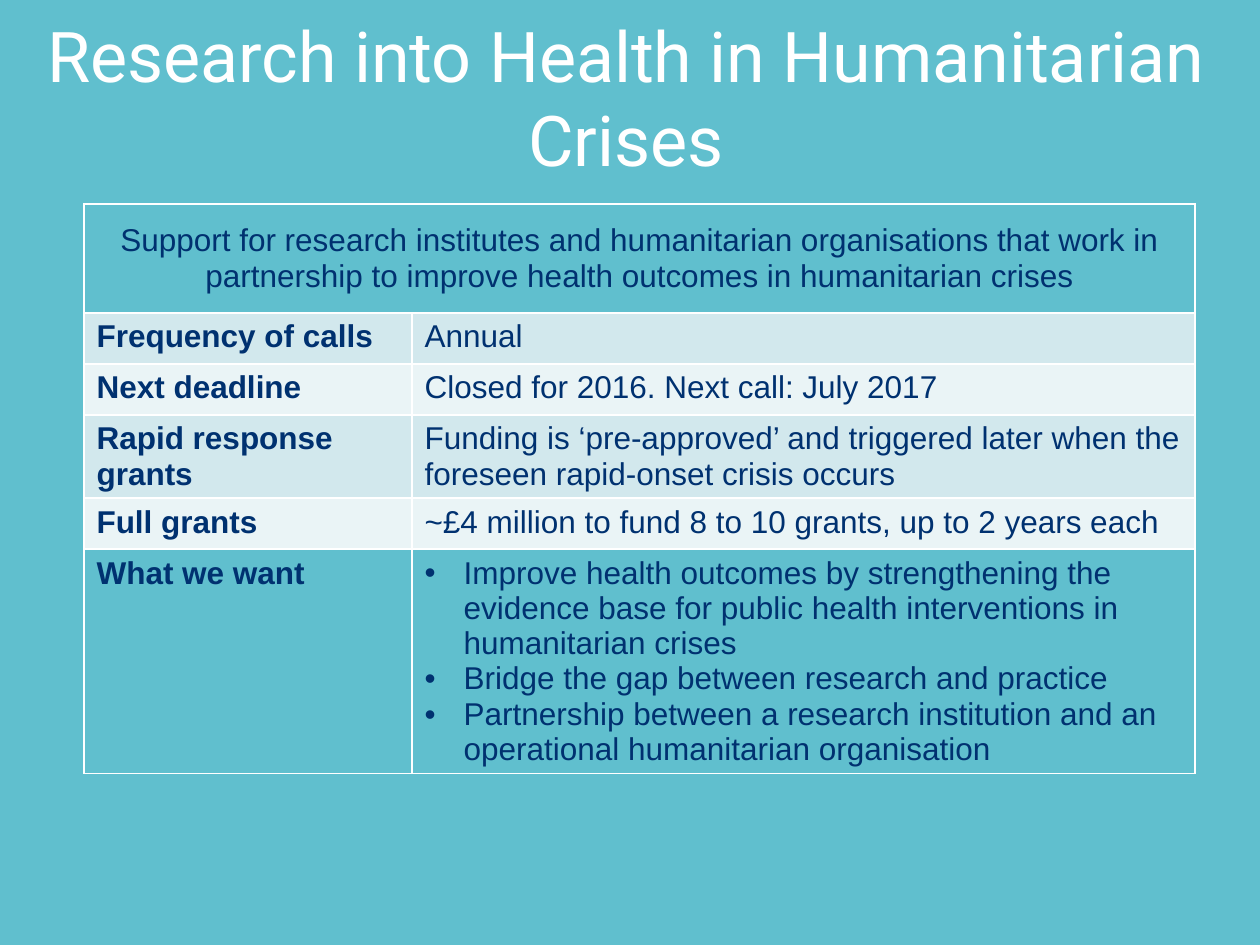
import dataclasses

import lxml.etree
import pptx
import pptx.dml.color
import pptx.enum.text
import pptx.oxml.ns
import pptx.util

EMU_PER_PX = 914400 / 126
COLORS = {
    "background": "60BFCE",
    "white": "FFFFFF",
    "navy": "003170",
    "band_dark": "D2E8ED",
    "band_light": "EAF4F6",
}
TITLE = "Research into Health in Humanitarian Crises"
SUMMARY = (
    "Support for research institutes and humanitarian organisations that work in "
    "partnership to improve health outcomes in humanitarian crises"
)
SUMMARY_HEIGHT = 109
COLUMN_WIDTHS = (328, 783)
BULLET_INDENT = 39


@dataclasses.dataclass(frozen=True)
class GrantRow:
    label: str
    details: tuple[str, ...]
    color: str
    height: int = 51
    bulleted: bool = False


GRANT_ROWS = (
    GrantRow("Frequency of calls", ("Annual",), "band_dark"),
    GrantRow("Next deadline", ("Closed for 2016. Next call: July 2017",), "band_light"),
    GrantRow(
        "Rapid response grants",
        ("Funding is ‘pre-approved’ and triggered later when the foreseen rapid-onset crisis occurs",),
        "band_dark",
        height=83,
    ),
    GrantRow("Full grants", ("~£4 million to fund 8 to 10 grants, up to 2 years each",), "band_light"),
    GrantRow(
        "What we want",
        (
            "Improve health outcomes by strengthening the evidence base for public health "
            "interventions in humanitarian crises",
            "Bridge the gap between research and practice",
            "Partnership between a research institution and an operational humanitarian organisation",
        ),
        "background",
        height=224,
        bulleted=True,
    ),
)


def px(length: int) -> pptx.util.Emu:
    return pptx.util.Emu(round(length * EMU_PER_PX))


def rgb(name: str) -> pptx.dml.color.RGBColor:
    return pptx.dml.color.RGBColor.from_string(COLORS[name])


def add_run(paragraph, text: str, font: str, size: int, color: str, bold: bool = False) -> None:
    run = paragraph.add_run()
    run.text = text
    run.font.name = font
    run.font.size = pptx.util.Pt(size)
    run.font.bold = bold
    run.font.color.rgb = rgb(color)


def add_bullet(paragraph) -> None:
    properties = paragraph._p.get_or_add_pPr()
    properties.set("marL", str(px(BULLET_INDENT)))
    properties.set("indent", str(-px(BULLET_INDENT)))
    qn = pptx.oxml.ns.qn
    lxml.etree.SubElement(properties, qn("a:buFont"), typeface="Arial")
    lxml.etree.SubElement(properties, qn("a:buChar"), char="•")


def style_cell(cell, color: str) -> None:
    cell.fill.solid()
    cell.fill.fore_color.rgb = rgb(color)
    qn = pptx.oxml.ns.qn
    properties = cell._tc.get_or_add_tcPr()
    for index, side in enumerate(("lnL", "lnR", "lnT", "lnB")):
        border = lxml.etree.Element(qn(f"a:{side}"), w=str(pptx.util.Pt(1)))
        fill = lxml.etree.SubElement(border, qn("a:solidFill"))
        lxml.etree.SubElement(fill, qn("a:srgbClr"), val=COLORS["white"])
        properties.insert(index, border)


def write_cell(cell, texts: tuple[str, ...], bold: bool = False, bulleted: bool = False) -> None:
    for index, text in enumerate(texts):
        frame = cell.text_frame
        paragraph = frame.add_paragraph() if index else frame.paragraphs[0]
        if bulleted:
            add_bullet(paragraph)
        add_run(paragraph, text, "Arial", 18, "navy", bold)


def add_title(slide) -> None:
    title = slide.shapes.title
    title.left, title.top, title.width, title.height = px(35), px(65), px(1182), px(116)
    frame = title.text_frame
    frame.margin_left = frame.margin_top = frame.margin_right = frame.margin_bottom = 0
    frame.word_wrap = True
    frame.auto_size = pptx.enum.text.MSO_AUTO_SIZE.NONE
    frame.vertical_anchor = pptx.enum.text.MSO_ANCHOR.BOTTOM
    paragraph = frame.paragraphs[0]
    paragraph.alignment = pptx.enum.text.PP_ALIGN.CENTER
    add_run(paragraph, TITLE, "Roboto", 40, "white")


def add_grant_table(slide) -> None:
    heights = [SUMMARY_HEIGHT, *(row.height for row in GRANT_ROWS)]
    colors = ["background", *(row.color for row in GRANT_ROWS)]
    table = slide.shapes.add_table(
        len(heights), len(COLUMN_WIDTHS), px(84), px(204), px(sum(COLUMN_WIDTHS)), px(sum(heights))
    ).table
    for column, width in zip(table.columns, COLUMN_WIDTHS):
        column.width = px(width)
    for row, height, color in zip(table.rows, heights, colors):
        row.height = px(height)
        for cell in row.cells:
            style_cell(cell, color)

    summary = table.cell(0, 0)
    summary.merge(table.cell(0, 1))
    summary.vertical_anchor = pptx.enum.text.MSO_ANCHOR.MIDDLE
    write_cell(summary, (SUMMARY,))
    summary.text_frame.paragraphs[0].alignment = pptx.enum.text.PP_ALIGN.CENTER

    for index, row in enumerate(GRANT_ROWS, start=1):
        write_cell(table.cell(index, 0), (row.label,), bold=True)
        write_cell(table.cell(index, 1), row.details, bulleted=row.bulleted)


def main() -> None:
    presentation = pptx.Presentation()
    presentation.slide_width, presentation.slide_height = px(1260), px(945)
    slide = presentation.slides.add_slide(presentation.slide_layouts[5])
    slide.background.fill.solid()
    slide.background.fill.fore_color.rgb = rgb("background")
    add_title(slide)
    add_grant_table(slide)
    presentation.save("out.pptx")


if __name__ == "__main__":
    main()
